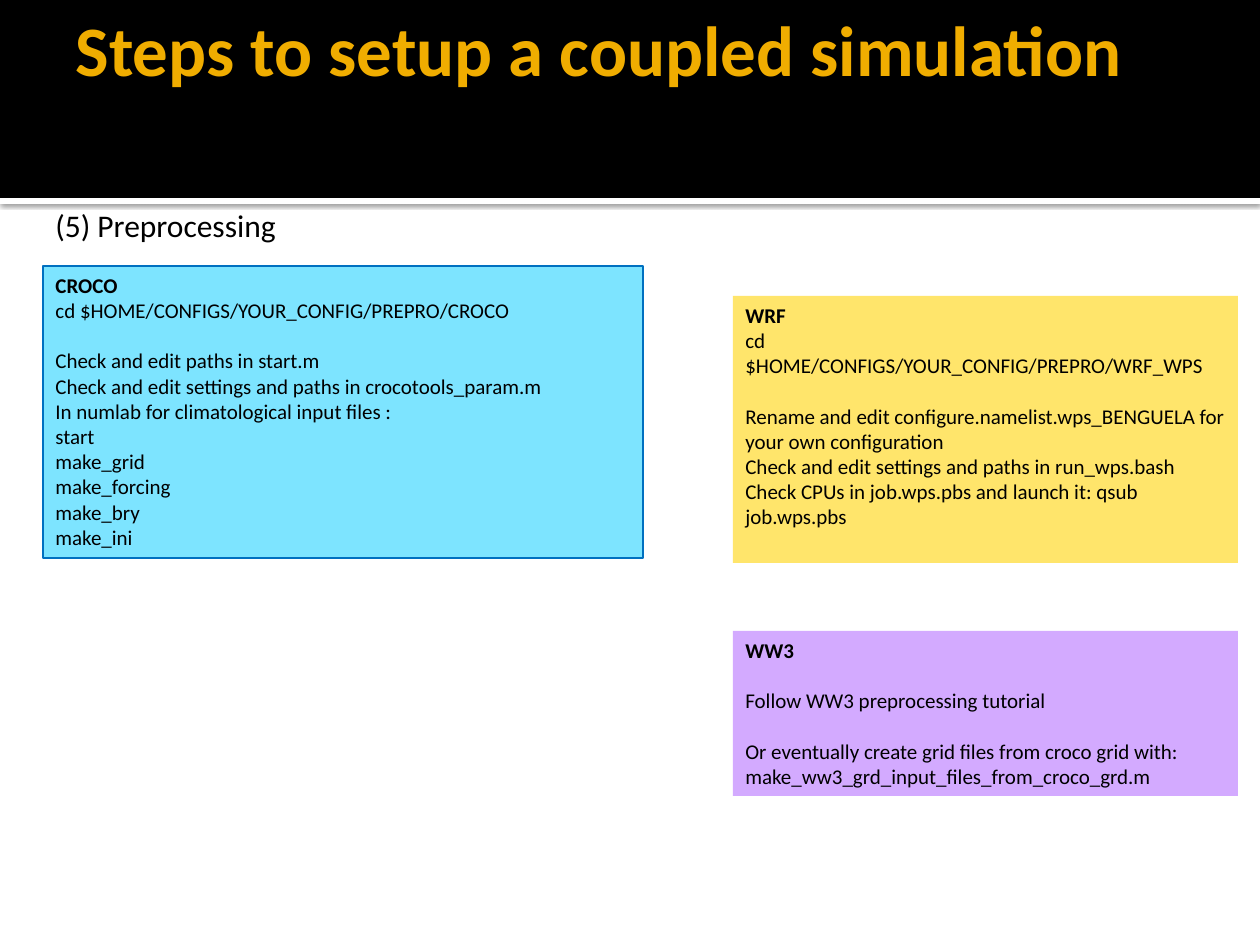
from dataclasses import dataclass

from lxml.etree import SubElement
from pptx import Presentation
from pptx.dml.color import RGBColor
from pptx.enum.shapes import MSO_SHAPE
from pptx.enum.text import MSO_ANCHOR, MSO_AUTO_SIZE, PP_ALIGN
from pptx.oxml.ns import qn
from pptx.util import Emu, Pt

PX = 914400 / 126
SLIDE_SIZE = (1260, 945)


@dataclass(frozen=True)
class Theme:
    font: str = "Calibri"
    black: str = "000000"
    white: str = "FFFFFF"
    gold: str = "F0AD00"
    blue_line: str = "0070C0"
    title_size: float = 40.5
    step_size: float = 18
    command_size: float = 12
    group_gap: float = 14.5


THEME = Theme()

TITLE = "Steps to setup a coupled simulation"
STEP = "(5) Preprocessing"
HEADER_HEIGHT = 198
RULE_HEIGHT = 6

MODELS = [
    {
        "box": (733, 296, 505, 267),
        "fill": "FFE56B",
        "line": None,
        "groups": [
            ["WRF", "cd $HOME/CONFIGS/YOUR_CONFIG/PREPRO/WRF_WPS"],
            [
                "Rename and edit configure.namelist.wps_BENGUELA for your own configuration",
                "Check and edit settings and paths in run_wps.bash",
                "Check CPUs in job.wps.pbs and launch it: qsub job.wps.pbs",
            ],
        ],
    },
    {
        "box": (43, 266, 600, 292),
        "fill": "7DE4FF",
        "line": THEME.blue_line,
        "groups": [
            ["CROCO", "cd $HOME/CONFIGS/YOUR_CONFIG/PREPRO/CROCO"],
            [
                "Check and edit paths in start.m",
                "Check and edit settings and paths in crocotools_param.m",
                "In numlab for climatological input files :",
                "start",
                "make_grid",
                "make_forcing",
                "make_bry",
                "make_ini",
            ],
        ],
    },
    {
        "box": (733, 631, 505, 165),
        "fill": "D3AAFF",
        "line": None,
        "groups": [
            ["WW3"],
            ["Follow WW3 preprocessing tutorial"],
            [
                "Or eventually create grid files from croco grid with:",
                "make_ww3_grd_input_files_from_croco_grd.m",
            ],
        ],
    },
]


def px(length):
    return Emu(round(length * PX))


def place(box):
    return [px(length) for length in box]


def write(paragraph, text, size, color=THEME.black, bold=False):
    paragraph.text = text
    paragraph.alignment = PP_ALIGN.LEFT
    font = paragraph.runs[0].font
    font.name = THEME.font
    font.size = Pt(size)
    font.bold = bold
    font.color.rgb = RGBColor.from_string(color)


def add_block(slide, box, fill, line=None):
    block = slide.shapes.add_shape(MSO_SHAPE.RECTANGLE, *place(box))
    block.shadow.inherit = False
    block.fill.solid()
    block.fill.fore_color.rgb = RGBColor.from_string(fill)
    if line:
        block.line.color.rgb = RGBColor.from_string(line)
        block.line.width = Pt(0.75)
    else:
        block.line.fill.background()
    return block


def add_soft_shadow(block):
    effects = block.element.spPr.find(qn("a:effectLst"))
    shadow = SubElement(effects, qn("a:outerShdw"), blurRad=str(Pt(2.5)),
                        dist=str(Pt(0.8)), dir="5400000", rotWithShape="0")
    color = SubElement(shadow, qn("a:srgbClr"), val=THEME.black)
    SubElement(color, qn("a:alpha"), val="60000")


def add_header(slide):
    width = SLIDE_SIZE[0]
    rule = add_block(slide, (0, HEADER_HEIGHT, width, RULE_HEIGHT), THEME.white)
    add_soft_shadow(rule)
    add_block(slide, (0, 0, width, HEADER_HEIGHT), THEME.black)

    title = slide.shapes.title
    title.left, title.top, title.width, title.height = place((63, 3, 1134, 173))
    frame = title.text_frame
    frame.auto_size = MSO_AUTO_SIZE.NONE
    frame.vertical_anchor = MSO_ANCHOR.TOP
    frame.margin_left = frame.margin_right = Pt(7.2)
    frame.margin_top = frame.margin_bottom = Pt(7.2)
    heading = frame.paragraphs[0]
    write(heading, TITLE, THEME.title_size, THEME.gold, bold=True)
    heading.line_spacing = 0.9
    heading.space_before = Pt(5)
    slide.shapes.element.append(title.element)


def add_step(slide):
    step = slide.shapes.add_textbox(*place((43, 200, 1174, 50)))
    step.text_frame.word_wrap = True
    paragraph = step.text_frame.paragraphs[0]
    write(paragraph, STEP, THEME.step_size)
    paragraph.space_after = Pt(12)


def add_model(slide, model):
    block = add_block(slide, model["box"], model["fill"], model["line"])
    frame = block.text_frame
    frame.word_wrap = True
    frame.vertical_anchor = MSO_ANCHOR.TOP
    for group_index, group in enumerate(model["groups"]):
        for line_index, text in enumerate(group):
            is_name = group_index == line_index == 0
            paragraph = frame.paragraphs[0] if is_name else frame.add_paragraph()
            write(paragraph, text, THEME.command_size, bold=is_name)
            if group_index and line_index == 0:
                paragraph.space_before = Pt(THEME.group_gap)


def main():
    deck = Presentation()
    deck.slide_width, deck.slide_height = place(SLIDE_SIZE)
    slide = deck.slides.add_slide(deck.slide_layouts[5])
    add_header(slide)
    add_step(slide)
    for model in MODELS:
        add_model(slide, model)
    deck.save("out.pptx")


if __name__ == "__main__":
    main()
